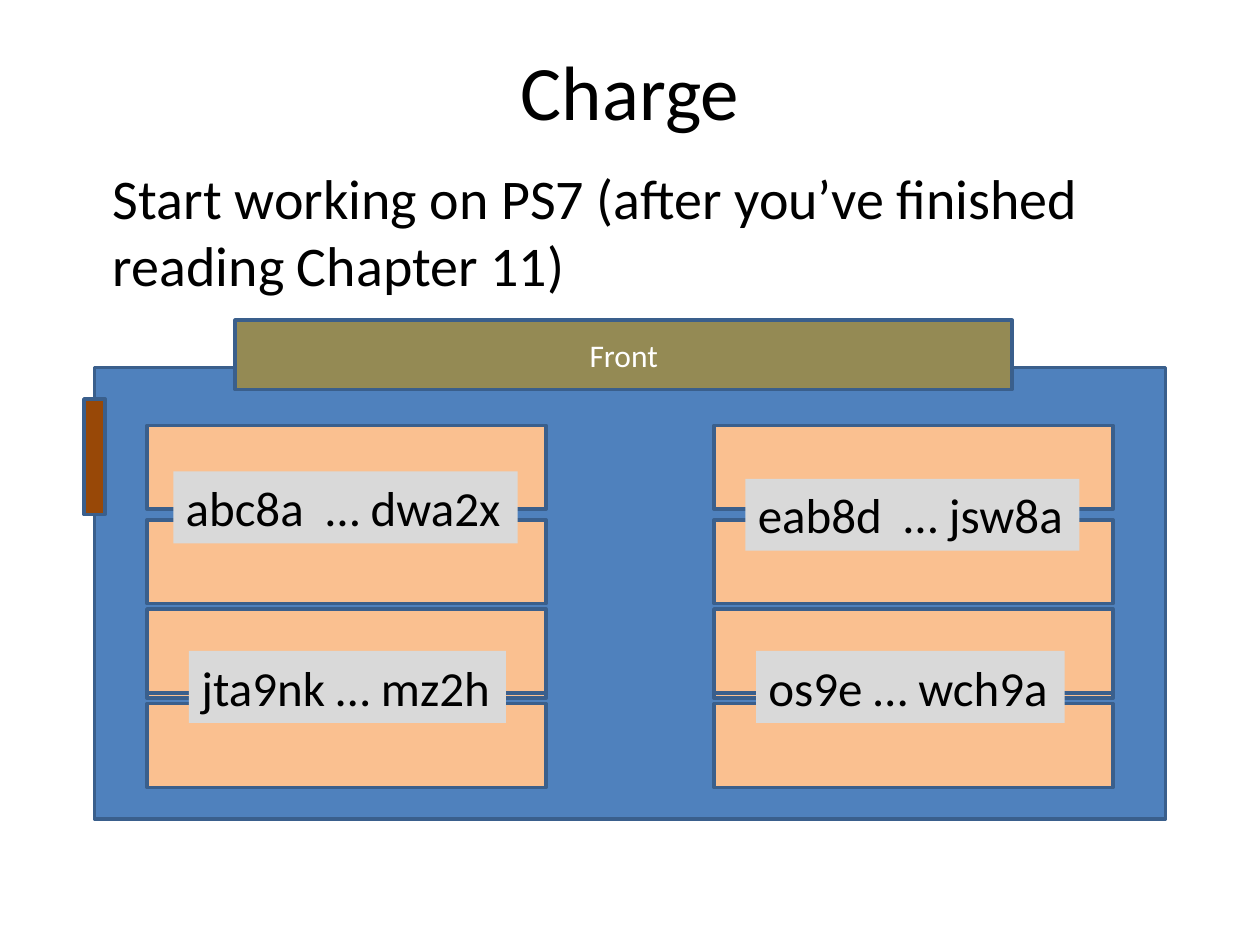
from dataclasses import dataclass
from typing import Optional

import pptx
import pptx.dml.color
import pptx.enum.shapes
import pptx.enum.text
import pptx.util

ALIGN = pptx.enum.text.PP_ALIGN
ANCHOR = pptx.enum.text.MSO_ANCHOR
CELL = pptx.util.Inches(10) // 120


@dataclass(frozen=True)
class Theme:
    font: str = "Calibri"
    ink: str = "000000"
    light: str = "FFFFFF"
    room: str = "4F81BD"
    outline: str = "3A5F8C"
    board: str = "948A54"
    door: str = "984807"
    desk: str = "FAC090"
    label: str = "D9D9D9"
    title_size: int = 44
    body_size: int = 32
    label_size: int = 28
    board_size: int = 18
    line_width: int = 2


@dataclass(frozen=True)
class Box:
    column: float
    row: float
    columns: float
    rows: float

    def lengths(self) -> list[int]:
        return [round(CELL * n) for n in (self.column, self.row, self.columns, self.rows)]


@dataclass(frozen=True)
class SeatRange:
    text: str
    box: Box


THEME = Theme()
ROOM = Box(9, 35, 102, 43)
BOARD = Box(22.4, 30.5, 74, 6.6)
DOOR = Box(8, 38, 2, 11)
DESK_COLUMNS = (14, 68)
DESK_BANKS = ((49.5, 58.5, 40.5), (67, 58))
SEAT_RANGES = (
    SeatRange("abc8a  … dwa2x", Box(16.5, 44.9, 32.8, 6.85)),
    SeatRange("eab8d  … jsw8a", Box(71, 45.6, 31.8, 6.85)),
    SeatRange("jta9nk … mz2h", Box(18, 62, 30.2, 6.85)),
    SeatRange("os9e … wch9a", Box(72, 62, 29.4, 6.85)),
)


def color(value: str) -> pptx.dml.color.RGBColor:
    return pptx.dml.color.RGBColor.from_string(value)


def add_rectangle(slide, box: Box, fill: str, outline: Optional[str] = THEME.outline):
    shape = slide.shapes.add_shape(pptx.enum.shapes.MSO_SHAPE.RECTANGLE, *box.lengths())
    shape.shadow.inherit = False
    shape.fill.solid()
    shape.fill.fore_color.rgb = color(fill)
    if outline:
        shape.line.color.rgb = color(outline)
        shape.line.width = pptx.util.Pt(THEME.line_width)
    else:
        shape.line.fill.background()
    return shape


def write(shape, text: str, size: int, ink: str = THEME.ink, align=ALIGN.LEFT,
          anchor=ANCHOR.TOP, wrap: bool = True):
    frame = shape.text_frame
    frame.word_wrap = wrap
    frame.vertical_anchor = anchor
    paragraph = frame.paragraphs[0]
    paragraph.text = text
    paragraph.alignment = align
    paragraph.font.name = THEME.font
    paragraph.font.size = pptx.util.Pt(size)
    paragraph.font.color.rgb = color(ink)
    return paragraph


def add_heading(slide) -> None:
    title = slide.shapes.add_textbox(*Box(6, 1, 108, 15).lengths())
    write(title, "Charge", THEME.title_size, align=ALIGN.CENTER, anchor=ANCHOR.MIDDLE)
    body = slide.shapes.add_textbox(*Box(5, 15, 108, 17).lengths())
    body.text_frame.margin_left = pptx.util.Inches(0.48)
    paragraph = write(body, "Start working on PS7 (after you’ve finished reading Chapter 11)",
                      THEME.body_size)
    paragraph.space_before = pptx.util.Pt(THEME.body_size * 0.2)


def add_classroom(slide) -> None:
    add_rectangle(slide, ROOM, THEME.room)
    board = add_rectangle(slide, BOARD, THEME.board)
    write(board, "Front", THEME.board_size, THEME.light, ALIGN.CENTER, ANCHOR.MIDDLE)
    add_rectangle(slide, DOOR, THEME.door)
    for bank in DESK_BANKS:
        for column in DESK_COLUMNS:
            for row in bank:
                add_rectangle(slide, Box(column, row, 38, 8), THEME.desk)
    for seats in SEAT_RANGES:
        label = add_rectangle(slide, seats.box, THEME.label, outline=None)
        write(label, seats.text, THEME.label_size, wrap=False)
        label.text_frame.auto_size = pptx.enum.text.MSO_AUTO_SIZE.SHAPE_TO_FIT_TEXT


def main() -> None:
    presentation = pptx.Presentation()
    presentation.slide_width = CELL * 120
    presentation.slide_height = CELL * 90
    slide = presentation.slides.add_slide(presentation.slide_layouts[6])
    add_heading(slide)
    add_classroom(slide)
    presentation.save("out.pptx")


if __name__ == "__main__":
    main()
